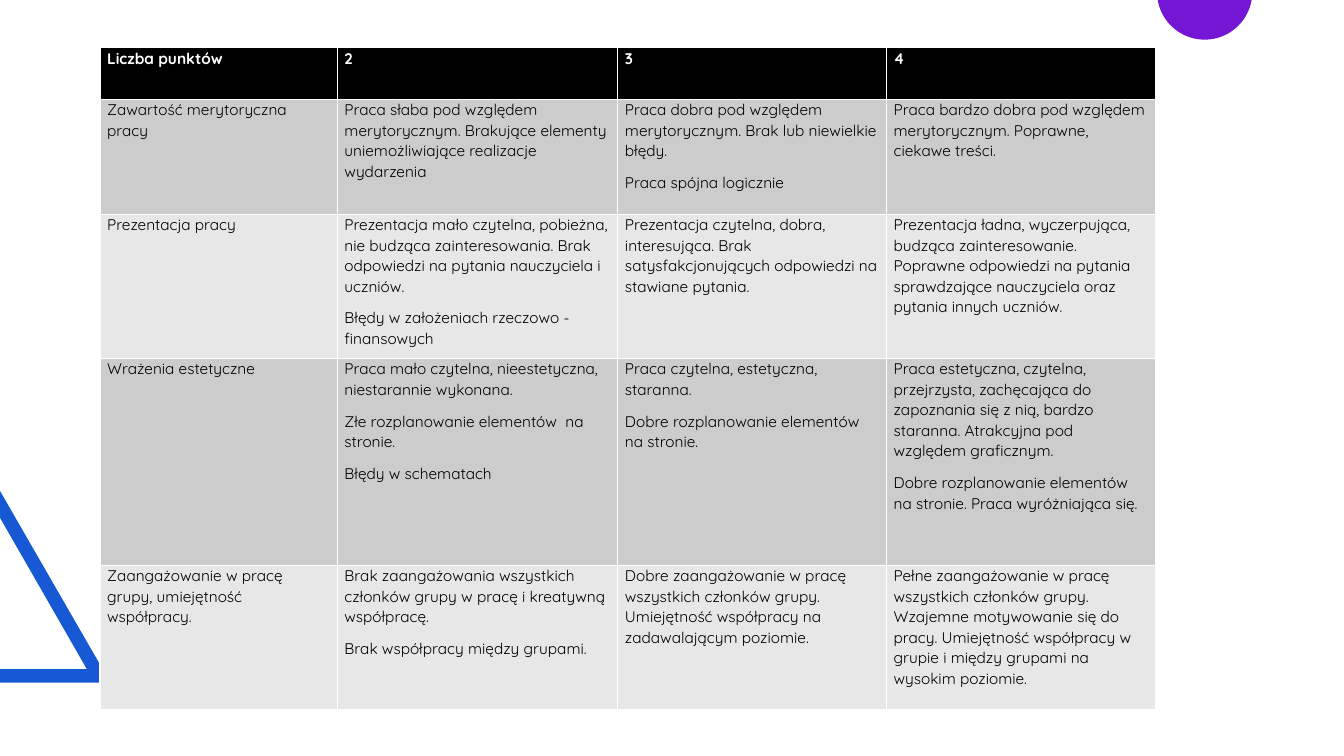
from dataclasses import dataclass
from math import asin, cos, pi, sin

from pptx import Presentation
from pptx.dml.color import RGBColor as RGB
from pptx.util import Cm, Pt


@dataclass(frozen=True)
class Theme:
    font: str = "Quicksand"
    size: Pt = Pt(11)
    gap: Pt = Pt(8)
    lead: float = 1.06
    blue: RGB = RGB(0x17, 0x59, 0xD5)
    violet: RGB = RGB(0x74, 0x17, 0xD5)
    white: RGB = RGB(0xFF, 0xFF, 0xFF)
    black: RGB = RGB(0, 0, 0)
    bands: tuple = (RGB(0xE7, 0xE7, 0xE7), RGB(0xCC, 0xCC, 0xCC))


THEME = Theme()
COLS = (5.98, 7.07, 6.77, 6.78)
ROWS = (1.3, 2.9, 3.63, 5.21, 3.63)
RUBRIC = (
    ("Liczba punktów", "2", "3", "4"),
    (
        "Zawartość merytoryczna pracy",
        "Praca słaba pod względem merytorycznym. Brakujące elementy "
        "uniemożliwiające realizacje wydarzenia",
        "Praca dobra pod względem merytorycznym. Brak lub niewielkie błędy.\n"
        "Praca spójna logicznie",
        "Praca bardzo dobra pod względem merytorycznym. Poprawne, ciekawe treści.",
    ),
    (
        "Prezentacja pracy",
        "Prezentacja mało czytelna, pobieżna, nie budząca zainteresowania. "
        "Brak odpowiedzi na pytania nauczyciela i uczniów.\n"
        "Błędy w założeniach rzeczowo - finansowych",
        "Prezentacja czytelna, dobra, interesująca. Brak satysfakcjonujących "
        "odpowiedzi na stawiane pytania.",
        "Prezentacja ładna, wyczerpująca, budząca zainteresowanie. Poprawne "
        "odpowiedzi na pytania sprawdzające nauczyciela oraz pytania innych uczniów.",
    ),
    (
        "Wrażenia estetyczne",
        "Praca mało czytelna, nieestetyczna, niestarannie wykonana.\n"
        "Złe rozplanowanie elementów  na stronie.\n"
        "Błędy w schematach",
        "Praca czytelna, estetyczna, staranna.\n"
        "Dobre rozplanowanie elementów na stronie.",
        "Praca estetyczna, czytelna, przejrzysta, zachęcająca do zapoznania się "
        "z nią, bardzo staranna. Atrakcyjna pod względem graficznym.\n"
        "Dobre rozplanowanie elementów na stronie. Praca wyróżniająca się.",
    ),
    (
        "Zaangażowanie w pracę grupy, umiejętność współpracy.",
        "Brak zaangażowania wszystkich członków grupy w pracę i kreatywną "
        "współpracę.\n"
        "Brak współpracy między grupami.",
        "Dobre zaangażowanie w pracę wszystkich członków grupy. Umiejętność "
        "współpracy na zadawalającym poziomie.",
        "Pełne zaangażowanie w pracę wszystkich członków grupy. Wzajemne "
        "motywowanie się do pracy. Umiejętność współpracy w grupie i między "
        "grupami na wysokim poziomie.",
    ),
)


def draw_shape(slide, points, color):
    """Draw a filled closed outline through points given in centimetres."""
    start, *rest = [(Cm(x), Cm(y)) for x, y in points]
    pen = slide.shapes.build_freeform(*start)
    pen.add_line_segments(rest, close=True)
    shape = pen.convert_to_shape()
    shape.shadow.inherit = False
    shape.fill.solid()
    shape.fill.fore_color.rgb = color
    shape.line.fill.background()


def draw_corner(slide, box):
    """Draw the part of a triangle frame that enters from the left edge."""
    x, y, w, h = box
    outline = (
        (0, 1), (0, 0.93), (0.82, 0.93), (0, 0.14), (0, 0),
        (0.99, 0.95), (1, 0.96), (0.99, 0.98), (0.97, 0.99), (0.93, 1),
    )
    draw_shape(slide, [(x + w * u, y + h * v) for u, v in outline], THEME.blue)


def draw_disc(slide, box, steps=60):
    """Draw the lower part of a disc whose top is cut off by the box."""
    x, y, w, h = box
    r = w / 2
    mid = y + h - r
    tilt = asin((y - mid) / r)
    turns = [tilt + (pi - 2 * tilt) * i / steps for i in range(steps + 1)]
    arc = [(x + r + r * cos(t), mid + r * sin(t)) for t in turns]
    draw_shape(slide, arc, THEME.violet)


def fill_cell(cell, text, color, head):
    cell.fill.solid()
    cell.fill.fore_color.rgb = color
    cell.margin_left = cell.margin_right = Cm(0.18)
    cell.margin_top = cell.margin_bottom = 0
    cell.text_frame.text = text
    for par in cell.text_frame.paragraphs:
        par.line_spacing = THEME.lead
        par.space_after = THEME.gap
        for run in par.runs:
            font = run.font
            font.name, font.size, font.bold = THEME.font, THEME.size, head
            font.color.rgb = THEME.white if head else THEME.black


def draw_rubric(slide, box):
    x, y, w, h = box
    frame = slide.shapes.add_table(
        len(ROWS), len(COLS), Cm(x), Cm(y), Cm(w), Cm(h)
    )
    table = frame.table
    for col, part in zip(table.columns, COLS):
        col.width = Cm(w * part / sum(COLS))
    for row, part in zip(table.rows, ROWS):
        row.height = Cm(h * part / sum(ROWS))
    for i, line in enumerate(RUBRIC):
        color = THEME.bands[i % 2] if i else THEME.black
        for j, text in enumerate(line):
            fill_cell(table.cell(i, j), text, color, i == 0)


def main():
    deck = Presentation()
    deck.slide_width, deck.slide_height = Cm(33.87), Cm(19.05)
    slide = deck.slides.add_slide(deck.slide_layouts[6])
    draw_corner(slide, (0, 12.37, 2.67, 4.83))
    draw_disc(slide, (29.16, 0, 2.4, 1))
    draw_rubric(slide, (2.52, 1.2, 26.6, 16.67))
    deck.save("out.pptx")


if __name__ == "__main__":
    main()
